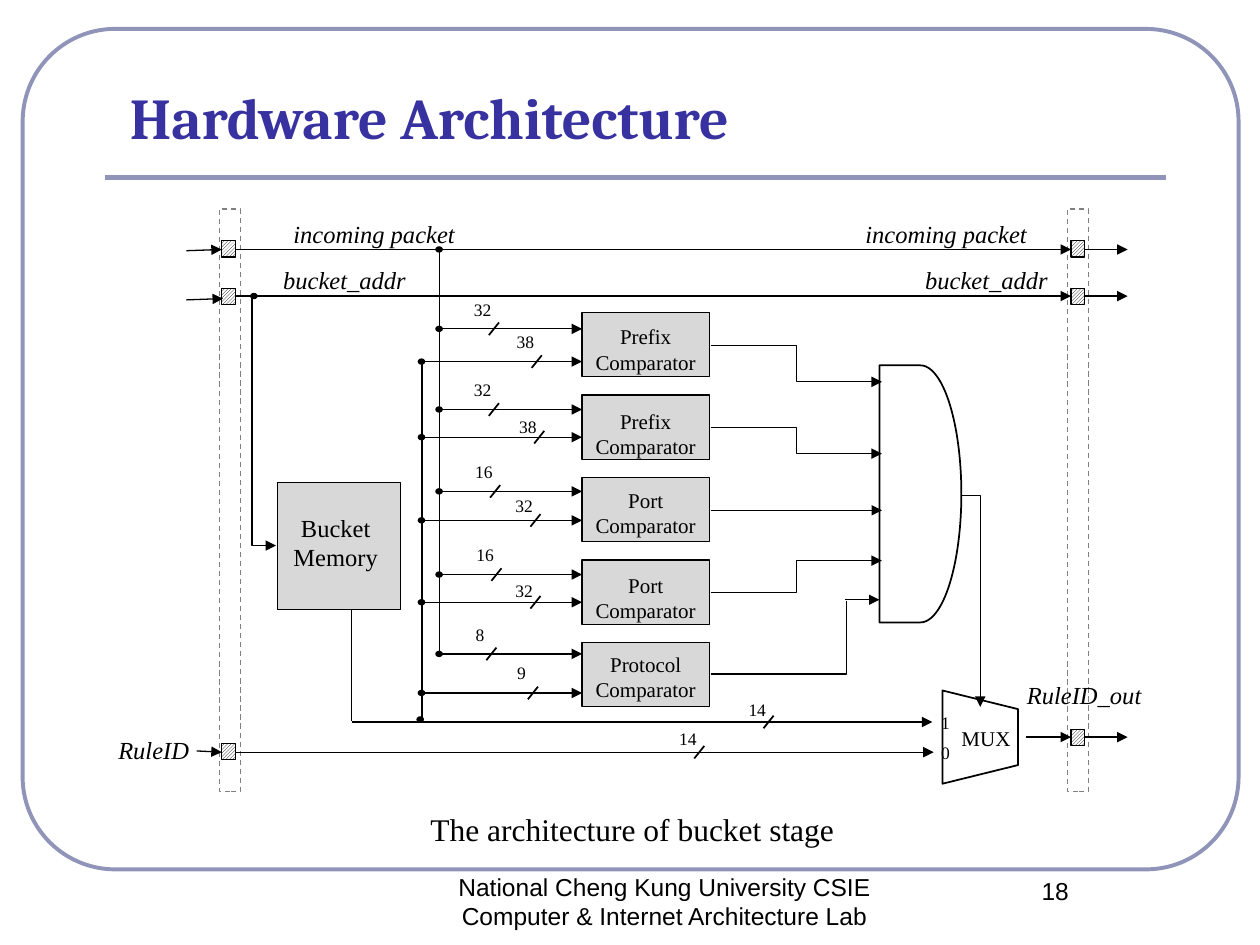
"""Build the hardware architecture slide with its bucket stage diagram."""
import lxml.etree
import pptx
import pptx.dml.color
import pptx.enum.dml
import pptx.enum.shapes
import pptx.enum.text
import pptx.oxml.ns
import pptx.util

Inches = pptx.util.Inches
Pt = pptx.util.Pt
hue = pptx.dml.color.RGBColor.from_string
qn = pptx.oxml.ns.qn
Kind = pptx.enum.shapes.MSO_SHAPE
Align = pptx.enum.text.PP_ALIGN
SERIF = "Times New Roman"

deck = pptx.Presentation()
deck.slide_width, deck.slide_height = Inches(10), Inches(7.5)
slide = deck.slides.add_slide(deck.slide_layouts[5])


def wire(x1, y1, x2, y2, head=True, bend=None, width=0.75, color="000000"):
    """Draw a straight line, or an elbow when bend names its preset."""
    link = slide.shapes.add_connector(
        pptx.enum.shapes.MSO_CONNECTOR.STRAIGHT,
        Inches(x1), Inches(y1), Inches(x2), Inches(y2))
    link.line.color.rgb = hue(color)
    link.line.width = Pt(width)
    props = link.element.spPr
    if bend:
        props.find(qn("a:prstGeom")).set("prst", bend)
    if head:
        lxml.etree.SubElement(props.find(qn("a:ln")), qn("a:tailEnd"), type="triangle")
    lxml.etree.SubElement(props, qn("a:effectLst"))
    return link


def label(text, x, y, w, h, size, italic=False, font=SERIF, pad=(0, 0), align=Align.CENTER):
    """Write one wrapped paragraph in a text box."""
    frame = slide.shapes.add_textbox(Inches(x), Inches(y), Inches(w), Inches(h)).text_frame
    frame.word_wrap = True
    frame.margin_left = frame.margin_right = Inches(pad[0])
    frame.margin_top = frame.margin_bottom = Inches(pad[1])
    para = frame.paragraphs[0]
    para.text = text
    para.alignment = align
    para.font.size, para.font.name, para.font.italic = Pt(size), font, italic
    para.font.color.rgb = hue("000000")


title = slide.shapes.title
title.left, title.top, title.width, title.height = map(Inches, (0.83, 0.6, 8.42, 0.65))
frame = title.text_frame
frame.text = "Hardware Architecture"
frame.vertical_anchor = pptx.enum.text.MSO_ANCHOR.BOTTOM
frame.auto_size = pptx.enum.text.MSO_AUTO_SIZE.NONE
frame.margin_left = Inches(0.2)
para = frame.paragraphs[0]
para.alignment = Align.LEFT
para.font.name, para.font.size, para.font.bold = "Cambria", Pt(33), True
para.font.color.rgb = hue("3732A0")

packet = [2.61, 3.25, 3.9, 4.56, 5.19]
field = [2.87, 3.47, 4.13, 4.78, 5.5]
blocks = [2.48 + 0.655 * row for row in range(5)]

GRAY = "D8D8D8"
boxes = [
    (Kind.ROUNDED_RECTANGLE, 0.18, 0.23, 9.65, 6.67, None, "9094B8", 2.25),
    (Kind.FLOWCHART_DELAY, 6.98, 2.9, 0.65, 2.04, None, "000000", 1),
    (Kind.FLOWCHART_MANUAL_OPERATION, 7.41, 5.55, 0.74, 0.6, None, "000000", 1),
    (Kind.RECTANGLE, 2.2, 3.83, 0.98, 1.01, GRAY, "000000", 0.75),
]
boxes += [(Kind.RECTANGLE, x, 1.66, 0.17, 4.62, None, "808080", 0.75) for x in (1.74, 8.47)]
boxes += [(Kind.RECTANGLE, 4.62, y, 1.01, 0.51, GRAY, "000000", 0.75) for y in blocks]
boxes += [(Kind.RECTANGLE, x, y, 0.11, 0.13, "hatch", "000000", 0.75)
          for x, last in ((1.76, 5.9), (8.5, 5.79)) for y in (1.91, 2.29, last)]
dots = [(3.49, y) for y in [1.98] + packet] + [(3.35, y) for y in field]
dots += [(2.02, 2.35), (3.34, 5.71)]
boxes += [(Kind.OVAL, x - 0.03, y - 0.02, 0.05, 0.04, "000000", "000000", 0.75)
          for x, y in dots]

for kind, x, y, w, h, fill, edge, width in boxes:
    box = slide.shapes.add_shape(kind, Inches(x), Inches(y), Inches(w), Inches(h))
    box.shadow.inherit = False
    box.line.color.rgb = hue(edge)
    box.line.width = Pt(width)
    if fill == "hatch":
        box.fill.patterned()
        box.fill.pattern = pptx.enum.dml.MSO_PATTERN.LIGHT_UPWARD_DIAGONAL
        box.fill.fore_color.rgb = hue("000000")
        box.fill.back_color.rgb = hue("FFFFFF")
    elif fill:
        box.fill.solid()
        box.fill.fore_color.rgb = hue(fill)
    else:
        box.fill.background()
    if edge == "808080":
        box.line.dash_style = pptx.enum.dml.MSO_LINE.DASH
    if kind == Kind.ROUNDED_RECTANGLE:
        box.adjustments[0] = 0.11
    if kind == Kind.FLOWCHART_MANUAL_OPERATION:
        box.rotation = 270

wire(0.83, 1.41, 9.25, 1.41, False, width=3, color="9094B8")
for ends in ((3.35, 2.87, 3.35, 5.73), (3.49, 1.98, 3.49, 5.19), (2.79, 5.72, 2.79, 4.84)):
    wire(*ends, head=False)
arrows = [
    (1.48, 1.99, 1.76, 1.98), (1.48, 2.38, 1.77, 2.37), (1.56, 5.96, 1.76, 5.97),
    (1.87, 1.98, 8.5, 1.98), (1.87, 2.35, 8.5, 2.35), (1.87, 5.97, 7.41, 5.97),
    (2.79, 5.73, 7.4, 5.73), (5.64, 4.05, 7, 4.05), (6.71, 4.76, 6.98, 4.76),
    (8.14, 5.85, 8.5, 5.85),
]
arrows += [(8.61, y, 8.95, y) for y in (1.98, 2.35, 5.85)]
arrows += [(x, y, 4.62, y) for x, rows in ((3.49, packet), (3.35, field)) for y in rows]
for ends in arrows:
    wire(*ends)
for start, end in ((2.74, 3.03), (3.39, 3.6), (4.7, 4.45)):
    wire(5.64, start, 7, end, bend="bentConnector3")
wire(7.63, 3.93, 7.78, 5.61, bend="bentConnector2")
wire(5.64, 5.35, 6.72, 4.77, False, "bentConnector2")
feed = wire(3.08, 3.25, 1.11, 3.44, bend="bentConnector2")
feed.element.spPr.find(qn("a:xfrm")).set("rot", "16200000")

bits = [(6.1, 5.73, 0.18, "14"), (5.55, 5.97, 0.19, "14")]
bits += [(x, y, 0.24, text) for x, y, text in zip(
    (3.92, 3.92, 3.93, 3.94, 3.9), packet, ("32", "32", "16", "16", "8"))]
bits += list(zip((4.26, 4.28, 4.25, 4.25, 4.23), field,
                 (0.24, 0.17, 0.2, 0.18, 0.25), ("38", "38", "32", "32", "9")))
for x, y, lift, text in bits:
    wire(x + 0.04, y - 0.05, x - 0.04, y + 0.05, False, width=1)
    label(text, x - 0.19, y - lift, 0.2, 0.21, 10)

names = ("Prefix", "Prefix", "Port", "Port", "Protocol")
for name, y in zip(names, (2.57, 3.24, 3.87, 4.54, 5.17)):
    label(name + " Comparator", 4.66, y, 0.93, 0.31, 12)
for text, x, y, w, h in (
        ("incoming packet", 2.12, 1.74, 1.7, 0.2), ("incoming packet", 6.65, 1.74, 1.72, 0.2),
        ("bucket_addr", 2.12, 2.1, 1.23, 0.26), ("bucket_addr", 7.2, 2.1, 1.26, 0.25),
        ("RuleID", 0.88, 5.83, 0.68, 0.26)):
    label(text, x, y, w, h, 14, True)
label("RuleID_out", 8.15, 5.4, 1.11, 0.29, 14, True, align=Align.LEFT)
label("Bucket Memory", 2.2, 4.07, 0.93, 0.31, 14)
label("MUX", 7.58, 5.76, 0.49, 0.16, 12)
label("1", 7.37, 5.65, 0.27, 0.15, 10)
label("0", 7.37, 5.89, 0.27, 0.15, 10)
label("The architecture of bucket stage", 1.39, 6.43, 7.26, 0.27, 18)
label("National Cheng Kung University CSIE Computer & Internet Architecture Lab",
      3.11, 6.87, 4.33, 0.5, 14, font="Arial", pad=(0.1, 0.05))
label("18", 7.5, 6.9, 1.75, 0.5, 14, font="Arial", pad=(0.1, 0.05))

deck.save("out.pptx")
